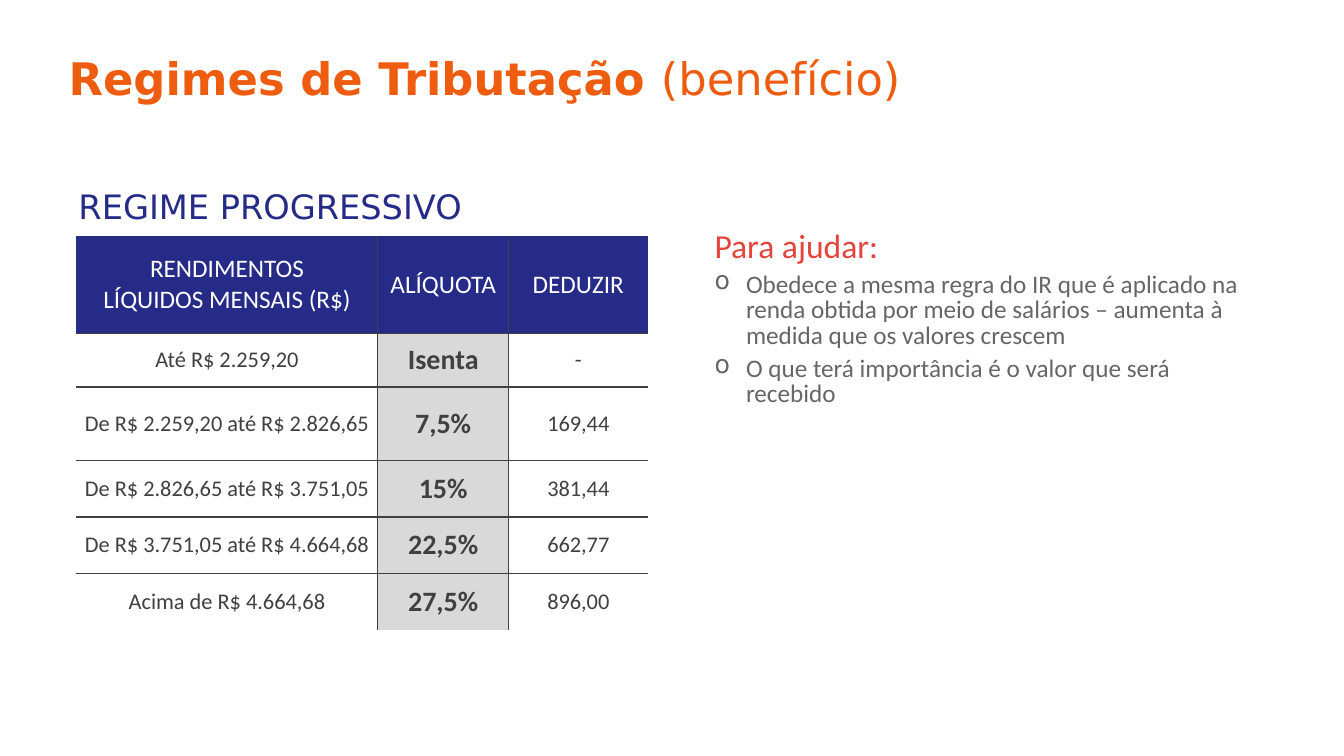
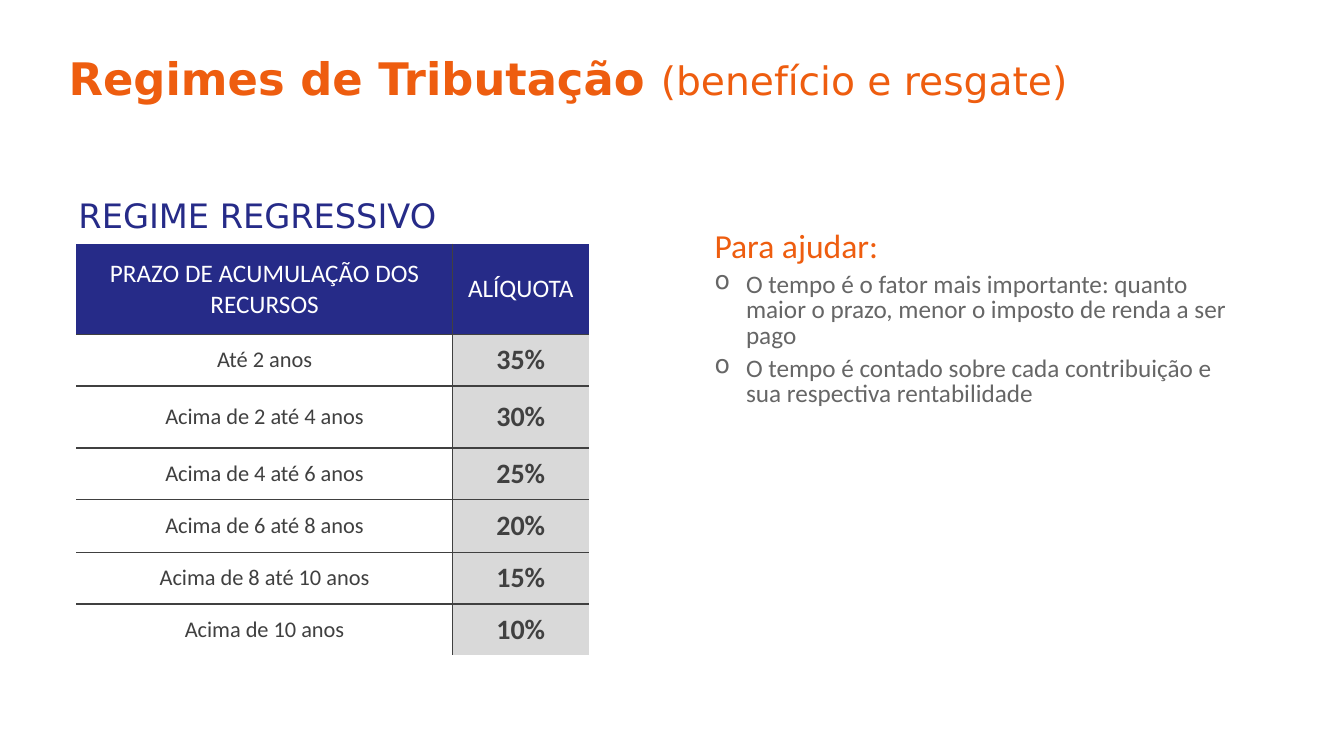
"""Build two slides that compare the progressive and regressive tax regimes."""
from dataclasses import dataclass

from lxml import etree
from pptx import Presentation
from pptx import util as u
from pptx.dml import color as dml
from pptx.enum import text as txt
from pptx.oxml import ns

COLORS = {
    "orange": "EE5D0F",
    "red": "E3453C",
    "navy": "262B88",
    "white": "FFFFFF",
    "ink": "404040",
    "gray": "666666",
    "silver": "D9D9D9",
}
HEADING_FONT = "DejaVu Sans"
BODY_FONT = "Calibri"
LEFT = 49
RATE_COLUMN = 1
BULLET_INDENT = 22.5


@dataclass(frozen=True)
class Style:
    size: float
    color: str
    font: str = BODY_FONT
    bold: bool = False


@dataclass(frozen=True)
class Grid:
    left: float
    top: float
    widths: tuple[float, ...]
    heights: tuple[float, ...]
    margin_y: float
    rows: tuple[tuple[str, ...], ...]


@dataclass(frozen=True)
class Regime:
    scope: str
    scope_size: float
    title_width: float
    name: str
    name_top: float
    help_color: str
    tips: tuple[str, ...]
    grid: Grid


TITLE = Style(32, "orange", HEADING_FONT, True)
SUBTITLE = Style(24, "navy", HEADING_FONT)
HEADER = Style(18, "white")
VALUE = Style(16, "ink")
RATE = Style(20, "ink", bold=True)
TIP = Style(18, "gray")

REGIMES = (
    Regime(
        "(benefício)", 32, 683, "REGIME PROGRESSIVO", 126.7, "red",
        (
            "Obedece a mesma regra do IR que é aplicado na renda obtida por meio "
            "de salários – aumenta à medida que os valores crescem",
            "O que terá importância é o valor que será recebido",
        ),
        Grid(
            54.5, 168.5, (215.3, 93.6, 99.4), (69.8, 38.2, 52.6, 40.3, 40.3, 40.3), 2.9,
            (
                ("RENDIMENTOS\nLÍQUIDOS MENSAIS (R$)", "ALÍQUOTA", "DEDUZIR"),
                ("Até R$ 2.259,20", "Isenta", "-"),
                ("De R$ 2.259,20 até R$ 2.826,65", "7,5%", "169,44"),
                ("De R$ 2.826,65 até R$ 3.751,05", "15%", "381,44"),
                ("De R$ 3.751,05 até R$ 4.664,68", "22,5%", "662,77"),
                ("Acima de R$ 4.664,68", "27,5%", "896,00"),
            ),
        ),
    ),
    Regime(
        "(benefício e resgate)", 28, 725, "REGIME REGRESSIVO", 133.2, "orange",
        (
            "O tempo é o fator mais importante: quanto maior o prazo, menor o "
            "imposto de renda a ser pago",
            "O tempo é contado sobre cada contribuição e sua respectiva rentabilidade",
        ),
        Grid(
            54.5, 174, (269, 97), (65, 36.7, 44.4, 36.7, 38, 36.7, 36.7), 4.3,
            (
                ("PRAZO DE ACUMULAÇÃO DOS RECURSOS", "ALÍQUOTA"),
                ("Até 2 anos", "35%"),
                ("Acima de 2 até 4 anos", "30%"),
                ("Acima de 4 até 6 anos", "25%"),
                ("Acima de 6 até 8 anos", "20%"),
                ("Acima de 8 até 10 anos", "15%"),
                ("Acima de 10 anos", "10%"),
            ),
        ),
    ),
)


def rgb(name: str) -> dml.RGBColor:
    return dml.RGBColor.from_string(COLORS[name])


def add_span(para, words: str, style: Style) -> None:
    for index, line in enumerate(words.split("\n")):
        if index:
            para.add_line_break()
        span = para.add_run()
        span.text = line
        span.font.name = style.font
        span.font.size = u.Pt(style.size)
        span.font.bold = style.bold
        span.font.color.rgb = rgb(style.color)


def add_box(page, left: float, top: float, width: float, height: float):
    box = page.shapes.add_textbox(u.Pt(left), u.Pt(top), u.Pt(width), u.Pt(height))
    box.text_frame.word_wrap = True
    return box.text_frame


def add_title(page, regime: Regime) -> None:
    frame = add_box(page, LEFT, 36, regime.title_width, 39)
    frame.margin_left = frame.margin_right = frame.margin_top = frame.margin_bottom = 0
    frame.auto_size = txt.MSO_AUTO_SIZE.SHAPE_TO_FIT_TEXT
    para = frame.paragraphs[0]
    add_span(para, "Regimes de Tributação ", TITLE)
    add_span(para, regime.scope, Style(regime.scope_size, "orange", HEADING_FONT))


def add_subtitle(page, regime: Regime) -> None:
    frame = add_box(page, LEFT, regime.name_top, 327, 41)
    frame.vertical_anchor = txt.MSO_ANCHOR.MIDDLE
    add_span(frame.paragraphs[0], regime.name, SUBTITLE)


def set_bullet(para) -> None:
    props = para._p.get_or_add_pPr()
    props.set("marL", str(u.Pt(BULLET_INDENT)))
    props.set("indent", str(-u.Pt(BULLET_INDENT)))
    etree.SubElement(props, ns.qn("a:buChar")).set("char", "o")


def add_help(page, regime: Regime) -> None:
    frame = add_box(page, 503.3, 157, 390.2, 139.7)
    frame.auto_size = txt.MSO_AUTO_SIZE.SHAPE_TO_FIT_TEXT
    para = frame.paragraphs[0]
    para.line_spacing = u.Pt(28.8)
    add_span(para, "Para ajudar:", Style(24, regime.help_color))
    for tip in regime.tips:
        para = frame.add_paragraph()
        set_bullet(para)
        para.line_spacing = u.Pt(18)
        para.space_before = u.Pt(6)
        add_span(para, tip, TIP)


def set_borders(cell, visible: dict[str, bool]) -> None:
    props = cell._tc.get_or_add_tcPr()
    for side, shown in visible.items():
        line = etree.SubElement(props, ns.qn(f"a:ln{side}"))
        line.set("w", str(u.Pt(1)))
        if shown:
            fill = etree.SubElement(line, ns.qn("a:solidFill"))
            etree.SubElement(fill, ns.qn("a:srgbClr")).set("val", COLORS["ink"])
        else:
            etree.SubElement(line, ns.qn("a:noFill"))


def fill_cell(cell, words: str, style: Style, fill: str | None, margin_y: float) -> None:
    if fill:
        cell.fill.solid()
        cell.fill.fore_color.rgb = rgb(fill)
    else:
        cell.fill.background()
    cell.margin_left = cell.margin_right = u.Pt(4.3)
    cell.margin_top = cell.margin_bottom = u.Pt(margin_y)
    cell.vertical_anchor = txt.MSO_ANCHOR.MIDDLE
    para = cell.text_frame.paragraphs[0]
    para.alignment = txt.PP_ALIGN.CENTER
    add_span(para, words, style)


def cell_look(row: int, column: int) -> tuple[Style, str | None]:
    if row == 0:
        return HEADER, "navy"
    return (RATE, "silver") if column == RATE_COLUMN else (VALUE, None)


def add_grid(page, grid: Grid) -> None:
    last_row, last_column = len(grid.heights) - 1, len(grid.widths) - 1
    table = page.shapes.add_table(
        last_row + 1, last_column + 1, u.Pt(grid.left), u.Pt(grid.top),
        u.Pt(sum(grid.widths)), u.Pt(sum(grid.heights)),
    ).table
    table.horz_banding = False
    for column, width in zip(table.columns, grid.widths):
        column.width = u.Pt(width)
    for row, height in zip(table.rows, grid.heights):
        row.height = u.Pt(height)
    for r, entries in enumerate(grid.rows):
        for c, words in enumerate(entries):
            cell = table.cell(r, c)
            set_borders(cell, {"L": c > 0, "R": c < last_column, "T": r > 0, "B": r < last_row})
            style, fill = cell_look(r, c)
            fill_cell(cell, words, style, fill, grid.margin_y)


def main() -> None:
    deck = Presentation()
    deck.slide_width, deck.slide_height = u.Pt(960), u.Pt(540)
    for regime in REGIMES:
        page = deck.slides.add_slide(deck.slide_layouts[6])
        add_grid(page, regime.grid)
        add_subtitle(page, regime)
        add_help(page, regime)
        add_title(page, regime)
    deck.save("out.pptx")


if __name__ == "__main__":
    main()
